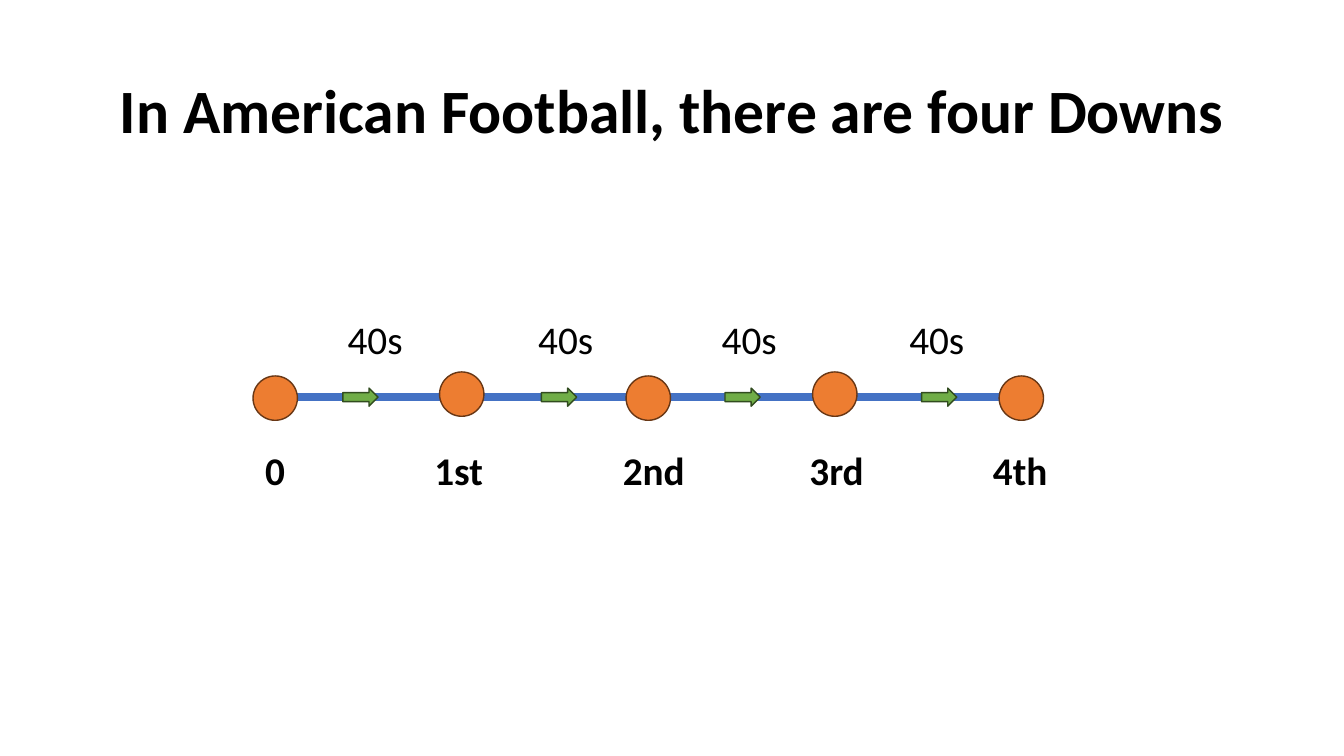
from lxml import etree
from pptx import Presentation
from pptx.dml.color import RGBColor
from pptx.enum.shapes import MSO_CONNECTOR, MSO_SHAPE
from pptx.enum.text import MSO_ANCHOR, MSO_AUTO_SIZE, PP_ALIGN
from pptx.oxml.ns import qn
from pptx.util import Inches, Pt

STRAIGHT = MSO_CONNECTOR.STRAIGHT
OVAL, RIGHT_ARROW = MSO_SHAPE.OVAL, MSO_SHAPE.RIGHT_ARROW
MIDDLE, TOP = MSO_ANCHOR.MIDDLE, MSO_ANCHOR.TOP
CENTER, LEFT = PP_ALIGN.CENTER, PP_ALIGN.LEFT
GROW = MSO_AUTO_SIZE.SHAPE_TO_FIT_TEXT

SLIDE_WIDTH, SLIDE_HEIGHT = 13.33, 7.5
TITLE_BOX = (0.92, 0.4, 11.5, 1.45)
TIMELINE_BOX = (2.73, 3.08, 7.4, 1.87)
AXIS_DROP = 0.86
DOT_SIZE = 0.44
DOT_LIFT = 0.04
ARROW_WIDTH, ARROW_HEIGHT = 0.35, 0.18
LABEL_HEIGHT = 0.57

DOWNS = [("0", -0.2, 0.75), ("1st", -0.37, 0.75), ("2nd", -0.35, 0.83),
         ("3rd", -0.35, 0.75), ("4th", -0.38, 0.75)]
PAUSES = [("40s", 0.62, 0.67), ("40s", 0.66, 0.79),
          ("40s", 0.63, 0.76), ("40s", 0.64, 0.86)]


def color(hex_code):
    return RGBColor.from_string(hex_code)


def add_text(slide, box, words, size, bold, align=LEFT, anchor=TOP):
    label = slide.shapes.add_textbox(*map(Inches, box))
    frame = label.text_frame
    frame.word_wrap = True
    frame.vertical_anchor = anchor
    paragraph = frame.paragraphs[0]
    paragraph.text = words
    paragraph.alignment = align
    look = {"name": "Calibri", "size": Pt(size), "bold": bold}
    for key, value in look.items():
        setattr(paragraph.font, key, value)
    paragraph.font.color.rgb = color("000000")
    return label


def add_marker(slide, kind, box, fill, outline):
    marker = slide.shapes.add_shape(kind, *map(Inches, box))
    marker.shadow.inherit = False
    marker.fill.solid()
    marker.fill.fore_color.rgb = color(fill)
    marker.line.color.rgb = color(outline)
    marker.line.width = Pt(1)


def add_segment(slide, start, end, axis):
    segment = slide.shapes.add_connector(
        STRAIGHT, Inches(start), Inches(axis), Inches(end), Inches(axis))
    segment.line.color.rgb = color("4472C4")
    segment.line.width = Pt(6)
    etree.SubElement(segment._element.spPr, qn("a:effectLst"))


def add_title(slide, box):
    title = add_text(slide, box, "In American Football, there are four Downs",
                     44, True, CENTER, MIDDLE)
    title.text_frame.paragraphs[0].line_spacing = 0.9


def add_timeline(slide, box):
    left, top, width, height = box
    pitch = width / len(PAUSES)
    axis = top + AXIS_DROP
    stops = [left + pitch * index for index in range(len(DOWNS))]

    for start, end in zip(stops, stops[1:]):
        add_segment(slide, start, end, axis)

    for index, (stop, (down, shift, label_width)) in enumerate(zip(stops, DOWNS)):
        dot_top = axis + 0.01 - DOT_SIZE / 2 - DOT_LIFT * (index % 2)
        add_marker(slide, OVAL, (stop - DOT_SIZE / 2, dot_top, DOT_SIZE, DOT_SIZE),
                   "ED7D31", "683715")
        label_box = (stop + shift, top + height - LABEL_HEIGHT, label_width, LABEL_HEIGHT)
        add_text(slide, label_box, down, 28, True).text_frame.auto_size = GROW

    for stop, (pause, label_shift, arrow_shift) in zip(stops, PAUSES):
        pause_box = (stop + label_shift, top, 0.8, LABEL_HEIGHT)
        add_text(slide, pause_box, pause, 28, False).text_frame.auto_size = GROW
        arrow_box = (stop + arrow_shift, axis - ARROW_HEIGHT / 2, ARROW_WIDTH, ARROW_HEIGHT)
        add_marker(slide, RIGHT_ARROW, arrow_box, "70AD47", "314C1F")


def main():
    deck = Presentation()
    deck.slide_width = Inches(SLIDE_WIDTH)
    deck.slide_height = Inches(SLIDE_HEIGHT)
    slide = deck.slides.add_slide(deck.slide_layouts[6])
    add_title(slide, TITLE_BOX)
    add_timeline(slide, TIMELINE_BOX)
    deck.save("out.pptx")


if __name__ == "__main__":
    main()
